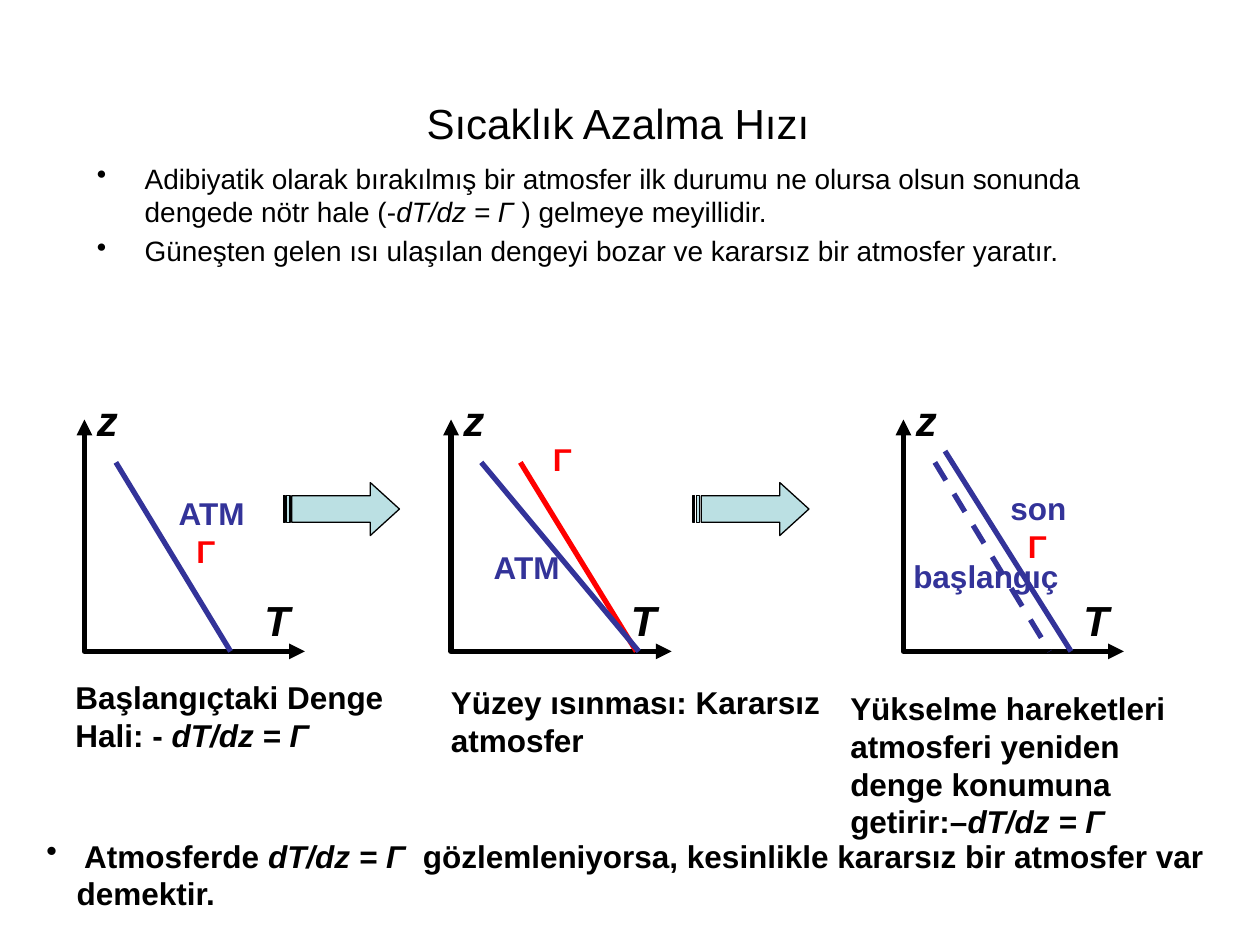
"""Build the slide on the temperature lapse rate."""
from lxml.etree import SubElement
from pptx import Presentation
from pptx.dml.color import RGBColor
from pptx.enum.dml import MSO_LINE
from pptx.enum.shapes import MSO_CONNECTOR, MSO_SHAPE
from pptx.enum.text import MSO_ANCHOR, MSO_AUTO_SIZE, PP_ALIGN
from pptx.oxml.ns import qn
from pptx.util import Inches, Pt

BLACK, BLUE, RED, TEAL = "000000", "333399", "FF0000", "BBE0E3"
FONT = "Arial"
TITLE = "Sıcaklık Azalma Hızı"
INTRODUCTION = [
    "Adibiyatik olarak bırakılmış bir atmosfer ilk durumu ne olursa olsun sonunda "
    "dengede nötr hale (-*dT/dz = Γ *) gelmeye meyillidir.",
    "Güneşten gelen ısı ulaşılan dengeyi bozar ve kararsız bir atmosfer yaratır.",
]
CONCLUSION = [" Atmosferde *dT/dz = Γ  *gözlemleniyorsa, kesinlikle kararsız bir atmosfer var demektir."]
AXIS_TOP, AXIS_BOTTOM, AXIS_LENGTH = 3.33, 5.17, 1.75
PANELS = [
    {
        "left": 0.67,
        "lines": [((0.92, 3.67), (1.83, AXIS_BOTTOM), BLUE, False)],
        "labels": [((1.32, 3.87, 0.74, 0.7), [("ATM", BLUE, 0), ("Γ", RED, 0.14)])],
        "caption": ((0.5, 5.33, 2.65, 0.7), ["Başlangıçtaki Denge", "Hali: - *dT/dz = Γ*"], False),
    },
    {
        "left": 3.58,
        "lines": [
            ((4.13, 3.67), (5.05, AXIS_BOTTOM), RED, False),
            ((5.07, AXIS_BOTTOM), (3.82, 3.67), BLUE, False),
        ],
        "labels": [
            ((4.29, 3.44, 0.35, 0.4), [("Γ", RED, 0)]),
            ((3.82, 4.3, 0.74, 0.4), [("ATM", BLUE, 0)]),
        ],
        "caption": ((3.48, 5.37, 3.13, 0.7), ["Yüzey ısınması: Kararsız", "atmosfer"], False),
    },
    {
        "left": 7.17,
        "lines": [
            ((7.42, 3.67), (8.33, AXIS_BOTTOM), BLUE, True),
            ((8.5, AXIS_BOTTOM), (7.5, 3.58), BLUE, False),
        ],
        "labels": [
            ((7.15, 4.37, 1.35, 0.4), [("başlangıç", BLUE, 0)]),
            ((7.92, 3.83, 0.65, 0.7), [("son", BLUE, 0), ("Γ", RED, 0.14)]),
        ],
        "caption": (
            (6.65, 5.42, 3.1, 1.6),
            ["Yükselme hareketleri atmosferi yeniden denge konumuna getirir:–*dT/dz = Γ*"],
            True,
        ),
    },
]
ARROW_LEFTS = [2.25, 5.5]


def color(value):
    return RGBColor.from_string(value)


def box(values):
    return [Inches(value) for value in values]


def style_paragraph(paragraph, text, size, fill=BLACK, bold=False):
    for index, part in enumerate(text.split("*")):
        if part:
            run = paragraph.add_run()
            run.text = part
            if index % 2:
                run.font.italic = True
    font = paragraph.font
    font.name, font.size, font.bold = FONT, Pt(size), bold
    font.color.rgb = color(fill)


def indent(paragraph, left, hanging=0.0, bullet=False):
    properties = paragraph._p.get_or_add_pPr()
    properties.set("marL", str(Inches(left)))
    properties.set("indent", str(-Inches(hanging)))
    if bullet:
        mark = properties.makeelement(qn("a:buChar"), {"char": "•"})
        properties.insert_element_before(mark, "a:tabLst", "a:defRPr", "a:extLst")


def add_text(slide, position, paragraphs, size=18, bold=True, wrap=False, hanging=0.0, before=0.0):
    frame = slide.shapes.add_textbox(*box(position)).text_frame
    frame.word_wrap = wrap
    frame.auto_size = MSO_AUTO_SIZE.NONE if before else MSO_AUTO_SIZE.SHAPE_TO_FIT_TEXT
    for index, (text, fill, left) in enumerate(paragraphs):
        paragraph = frame.add_paragraph() if index else frame.paragraphs[0]
        style_paragraph(paragraph, text, size, fill, bold)
        if before:
            paragraph.space_before = Pt(before)
        if left or hanging:
            indent(paragraph, left or hanging, hanging, bool(hanging))


def plain(texts):
    return [(text, BLACK, 0) for text in texts]


def add_axes(slide, left):
    points = [(left, AXIS_TOP), (left, AXIS_BOTTOM), (left + AXIS_LENGTH, AXIS_BOTTOM)]
    start, *rest = [tuple(box(point)) for point in points]
    builder = slide.shapes.build_freeform(*start)
    builder.add_line_segments(rest, close=False)
    axes = builder.convert_to_shape()
    axes.shadow.inherit = False
    axes.fill.background()
    axes.line.color.rgb = color(BLACK)
    axes.line.width = Pt(3)
    for end in ("a:headEnd", "a:tailEnd"):
        SubElement(axes.line._get_or_add_ln(), qn(end), type="triangle")
    add_text(slide, (left, AXIS_TOP - 0.25, 0.37, 0.5), plain(["*z*"]), 24)
    add_text(slide, (left + 1.33, AXIS_BOTTOM - 0.5, 0.4, 0.5), plain(["*T*"]), 24)


def add_line(slide, start, end, stroke, dashed):
    line = slide.shapes.add_connector(MSO_CONNECTOR.STRAIGHT, *box(start + end))
    line.line.color.rgb = color(stroke)
    line.line.width = Pt(3)
    if dashed:
        line.line.dash_style = MSO_LINE.DASH
    SubElement(line._element.spPr, qn("a:effectLst"))


def add_arrow(slide, left):
    arrow = slide.shapes.add_shape(MSO_SHAPE.STRIPED_RIGHT_ARROW, *box((left, 3.83, 0.92, 0.42)))
    arrow.adjustments[1] = 0.55
    arrow.shadow.inherit = False
    arrow.fill.solid()
    arrow.fill.fore_color.rgb = color(TEAL)
    arrow.line.color.rgb = color(BLACK)
    arrow.line.width = Pt(0.75)


def main():
    presentation = Presentation()
    presentation.slide_width, presentation.slide_height = Inches(10), Inches(7.5)
    slide = presentation.slides.add_slide(presentation.slide_layouts[5])
    title = slide.shapes.title
    title.left, title.top, title.width, title.height = box((0.33, 0.25, 9.15, 1.45))
    title.text_frame.vertical_anchor = MSO_ANCHOR.MIDDLE
    heading = title.text_frame.paragraphs[0]
    style_paragraph(heading, TITLE, 24)
    heading.alignment = PP_ALIGN.CENTER

    add_text(slide, (0.67, 1.23, 8.75, 4.5), plain(INTRODUCTION), 16, False, True, 0.38, 3.2)
    for panel in PANELS:
        add_axes(slide, panel["left"])
        for line in panel["lines"]:
            add_line(slide, *line)
        for position, paragraphs in panel["labels"]:
            add_text(slide, position, paragraphs)
        position, texts, wrap = panel["caption"]
        add_text(slide, position, plain(texts), wrap=wrap)
    add_text(slide, (0.27, 6.59, 9.52, 0.7), plain(CONCLUSION), wrap=True, hanging=0.24)
    for left in ARROW_LEFTS:
        add_arrow(slide, left)
    presentation.save("out.pptx")


if __name__ == "__main__":
    main()
